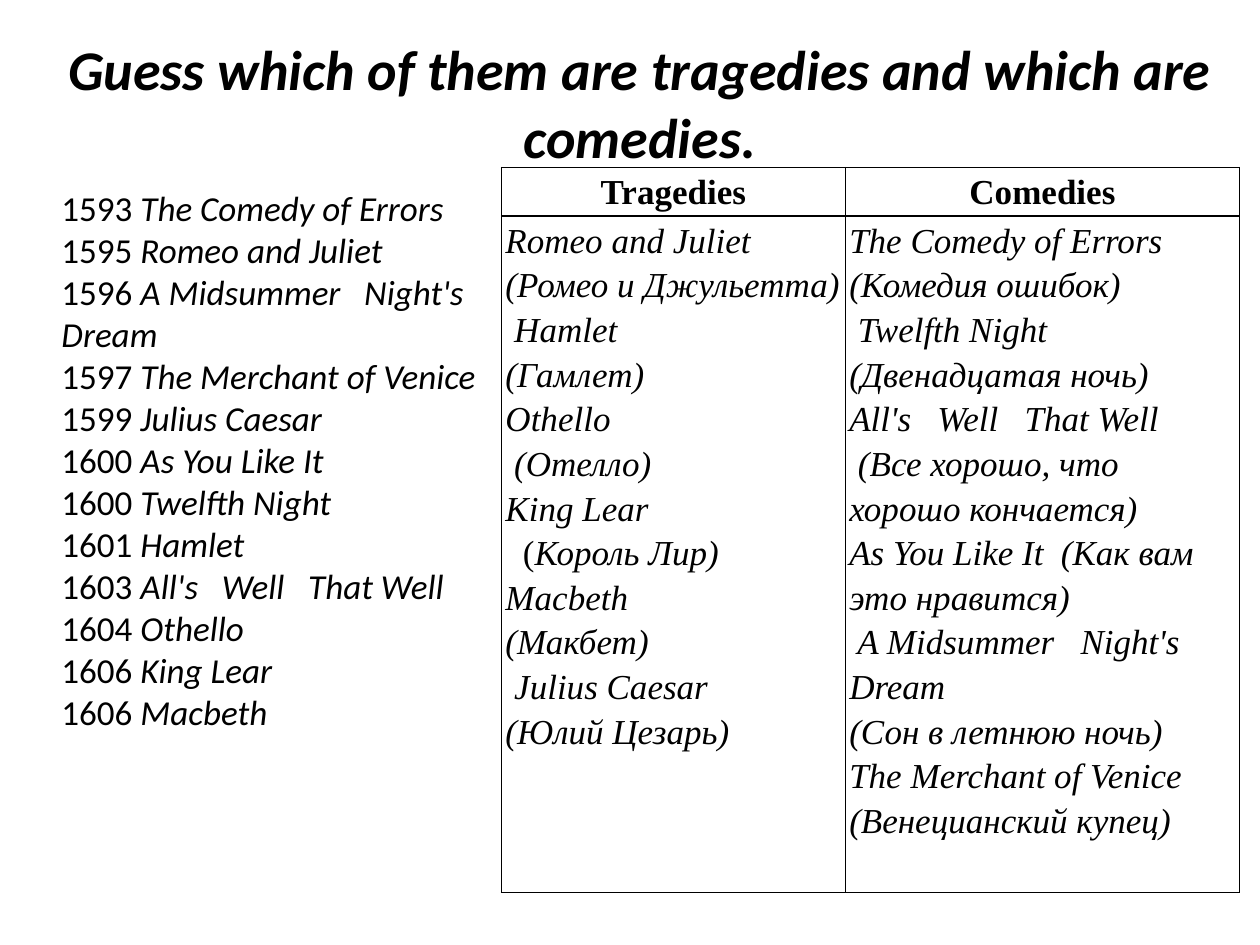
"""Build a slide that sorts Shakespeare's plays into tragedies and comedies."""
from dataclasses import dataclass

from lxml import etree
from pptx import Presentation
from pptx.dml.color import RGBColor
from pptx.enum.text import MSO_ANCHOR, PP_ALIGN
from pptx.oxml.ns import qn
from pptx.util import Cm, Pt

BLACK = RGBColor(0, 0, 0)
CENTER, LEFT = PP_ALIGN.CENTER, PP_ALIGN.LEFT
TOP, MIDDLE = MSO_ANCHOR.TOP, MSO_ANCHOR.MIDDLE
SANS, SERIF = "Calibri", "Times New Roman"


@dataclass(frozen=True)
class Style:
    font: str
    size: int = 20
    bold: bool = False
    italic: bool | None = None
    align: PP_ALIGN = LEFT
    spacing: float = 1.0


@dataclass(frozen=True)
class Run:
    text: str
    italic: bool | None = None


@dataclass(frozen=True)
class Play:
    year: int
    title: str


@dataclass(frozen=True)
class Genre:
    heading: str
    width: float
    lines: tuple[str | tuple[Run, ...], ...]


TITLE = Style(SANS, 32, bold=True, italic=True, align=CENTER)
LISTING = Style(SANS)
HEADING = Style(SERIF, bold=True, align=CENTER, spacing=1.15)
BODY = Style(SERIF, italic=True, spacing=1.15)

PLAYS = (
    Play(1593, "The Comedy of Errors"),
    Play(1595, "Romeo and Juliet"),
    Play(1596, "A Midsummer   Night's Dream"),
    Play(1597, "The Merchant of Venice"),
    Play(1599, "Julius Caesar"),
    Play(1600, "As You Like It"),
    Play(1600, "Twelfth Night"),
    Play(1601, "Hamlet"),
    Play(1603, "All's   Well   That Well"),
    Play(1604, "Othello"),
    Play(1606, "King Lear"),
    Play(1606, "Macbeth"),
)

GENRES = (
    Genre("Tragedies", 6.93, (
        "Romeo and Juliet (Ромео и Джульетта)",
        " Hamlet",
        "(Гамлет)",
        "Othello",
        " (Отелло)",
        "King Lear",
        (Run("  (", False), Run("Король Лир)", True)),
        "Macbeth",
        "(Макбет)",
        " Julius Caesar",
        "(Юлий Цезарь)",
    )),
    Genre("Comedies", 7.95, (
        "The Comedy of Errors  (Комедия ошибок)",
        " Twelfth Night  (Двенадцатая ночь)",
        "All's   Well   That Well",
        " (Все хорошо, что хорошо кончается)",
        "As You Like It  (Как вам это нравится)",
        " A Midsummer   Night's Dream",
        "(Сон в летнюю ночь)",
        "The Merchant of Venice",
        "(Венецианский купец)",
    )),
)
ROW_HEIGHTS = (0.97, 13.64)


def write(tf, lines, style: Style) -> None:
    """Write one paragraph per line, given as a string or as runs."""
    for i, line in enumerate(lines):
        p = tf.paragraphs[0] if i == 0 else tf.add_paragraph()
        p.alignment, p.line_spacing = style.align, style.spacing
        font = p.font
        font.name, font.size = style.font, Pt(style.size)
        font.bold, font.italic = style.bold, style.italic
        font.color.rgb = BLACK
        for run in (Run(line),) if isinstance(line, str) else line:
            r = p.add_run()
            r.text, r.font.italic = run.text, run.italic


def add_text(s, left: float, top: float, width: float, height: float,
             lines, style: Style, anchor=TOP) -> None:
    """Add a wrapped text box, measured in centimetres."""
    sp = s.shapes.add_textbox(Cm(left), Cm(top), Cm(width), Cm(height))
    tf = sp.text_frame
    tf.word_wrap, tf.vertical_anchor = True, anchor
    write(tf, lines, style)


def fill_cell(cell, lines, style: Style) -> None:
    """Give a cell its margins, black borders, clear fill and text."""
    cell.margin_left = cell.margin_right = Cm(0.08)
    cell.margin_top = cell.margin_bottom = 0
    tc_pr = cell._tc.get_or_add_tcPr()
    for side in ("lnL", "lnR", "lnT", "lnB"):
        ln = etree.SubElement(tc_pr, qn(f"a:{side}"), w=str(Pt(1)))
        solid = etree.SubElement(ln, qn("a:solidFill"))
        etree.SubElement(solid, qn("a:srgbClr"), val=str(BLACK))
    cell.fill.background()
    write(cell.text_frame, lines, style)


def add_genres(s, left: float, top: float) -> None:
    """Add the table with one column per genre."""
    width = sum(genre.width for genre in GENRES)
    table = s.shapes.add_table(len(ROW_HEIGHTS), len(GENRES), Cm(left), Cm(top),
                               Cm(width), Cm(sum(ROW_HEIGHTS))).table
    table.first_row = table.horz_banding = False
    for row, height in zip(table.rows, ROW_HEIGHTS):
        row.height = Cm(height)
    for col, genre in enumerate(GENRES):
        table.columns[col].width = Cm(genre.width)
        fill_cell(table.cell(0, col), [genre.heading], HEADING)
        fill_cell(table.cell(1, col), genre.lines, BODY)


def main() -> None:
    """Build and save the slide."""
    prs = Presentation()
    prs.slide_width, prs.slide_height = Cm(25.4), Cm(19.05)
    s = prs.slides.add_slide(prs.slide_layouts[6])
    add_text(s, 0.41, 0.58, 24.99, 3,
             ["Guess which of them are tragedies and which are comedies."], TITLE)
    plays = [(Run(f"{play.year} "), Run(play.title, True)) for play in PLAYS]
    add_text(s, 0.99, 3.58, 10.11, 11.38, plays, LISTING, MIDDLE)
    add_genres(s, 10.11, 3.38)
    prs.save("out.pptx")


if __name__ == "__main__":
    main()
